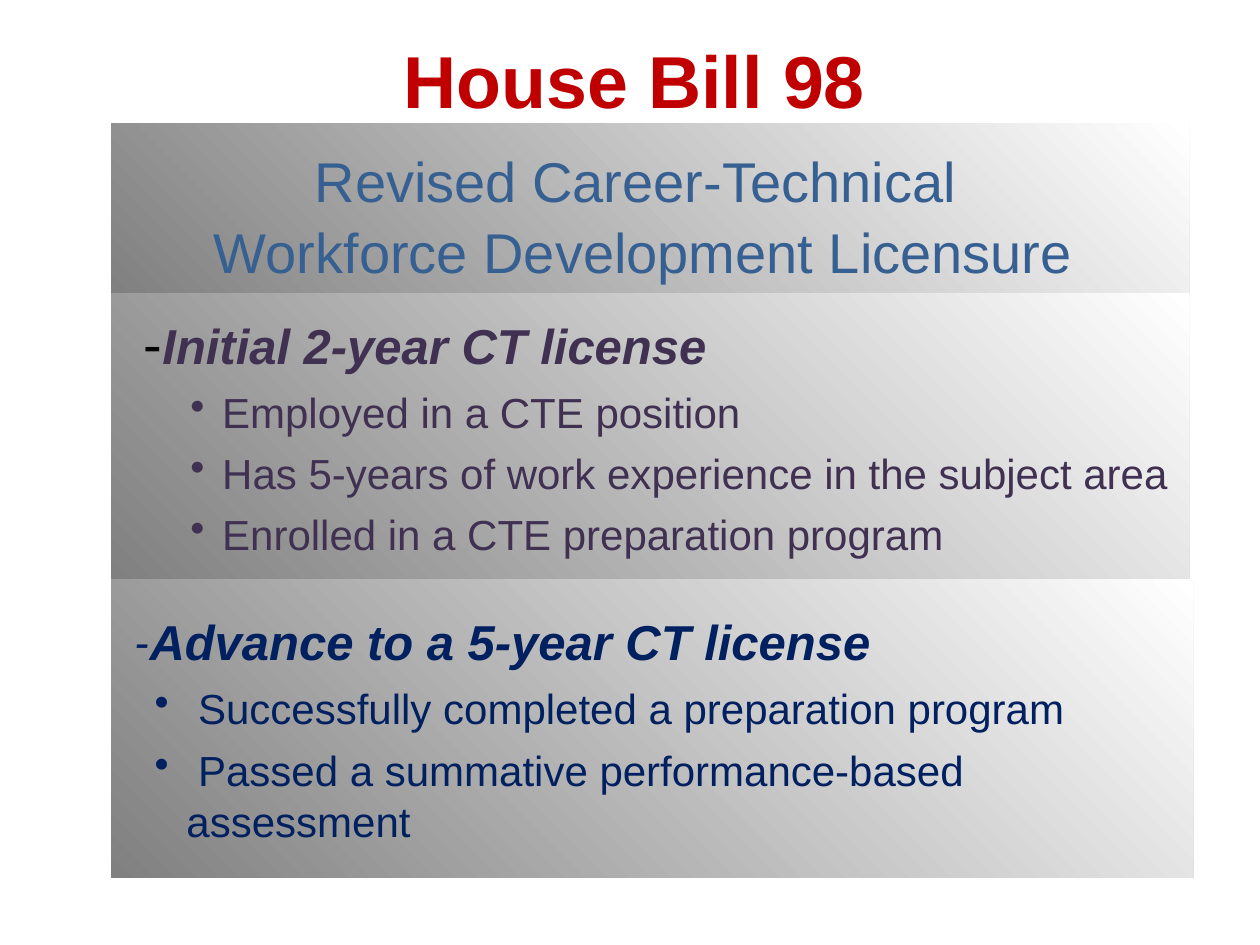
import pptx
import pptx.dml.color
import pptx.enum.shapes
import pptx.enum.text
import pptx.oxml
import pptx.oxml.ns
import pptx.util

Cm, Pt = pptx.util.Cm, pptx.util.Pt
ALIGN = pptx.enum.text.PP_ALIGN
ANCHOR = pptx.enum.text.MSO_ANCHOR

COLORS = {"red": "C00000", "blue": "376092", "purple": "403152",
          "navy": "002060", "black": "000000", "dark": "808080", "light": "FFFFFF"}

TITLE = {"name": "Arial", "size": Pt(42), "bold": True, "italic": False}
SUBTITLE = {"name": "Arial", "size": Pt(32), "bold": False, "italic": False}
HEADING = {"name": "Arial", "size": Pt(28), "bold": True, "italic": True}
ITEM = {"name": "Arial", "size": Pt(24), "bold": False, "italic": False}
INITIAL_DASH = {"name": "Arial", "size": Pt(32), "bold": False, "italic": False}
ADVANCE_DASH = {"name": "Calibri", "size": Pt(28), "bold": False, "italic": True}

PANEL_LEFT = 2.24


def rgb(color):
    return pptx.dml.color.RGBColor.from_string(COLORS[color])


def place(shape, left, top, width, height):
    box = {"left": left, "top": top, "width": width, "height": height}
    for name, value in box.items():
        setattr(shape, name, Cm(value))


def prepare_frame(frame, anchor, inset=None):
    frame.word_wrap = True
    frame.auto_size = pptx.enum.text.MSO_AUTO_SIZE.NONE
    frame.vertical_anchor = anchor
    if inset is not None:
        for side in ("left", "top", "right", "bottom"):
            setattr(frame, f"margin_{side}", Cm(inset))


def add_run(paragraph, text, style, color):
    run = paragraph.add_run()
    run.text = text
    for name, value in style.items():
        setattr(run.font, name, value)
    run.font.color.rgb = rgb(color)


def add_paragraph(frame, runs, align=ALIGN.LEFT, before=0, margin=0, bullet=False):
    """Fill the empty first paragraph, or append one; runs are (text, style, color)."""
    first = frame.paragraphs[0]
    paragraph = frame.add_paragraph() if first.runs else first
    paragraph.alignment = align
    paragraph.space_before = Pt(before)
    paragraph.level = 1 if bullet else 0
    properties = paragraph._p.get_or_add_pPr()
    properties.set("marL", str(Cm(margin)))
    properties.set("indent", str(Cm(-0.64 if bullet else 0)))
    tag = "a:buChar" if bullet else "a:buNone"
    marker = pptx.oxml.parse_xml(f"<{tag} {pptx.oxml.ns.nsdecls('a')}/>")
    if bullet:
        marker.set("char", "•")
    properties.append(marker)
    for text, style, color in runs:
        add_run(paragraph, text, style, color)


def add_license(frame, dash, heading, items, color, before, margin):
    """Write a dashed heading followed by its bulleted requirements."""
    add_paragraph(frame, [dash, (heading, HEADING, color)])
    for item in items:
        add_paragraph(frame, [(item, ITEM, color)],
                      before=before, margin=margin, bullet=True)


def add_panel(slide, top, width, height):
    panel = slide.shapes.add_shape(
        pptx.enum.shapes.MSO_SHAPE.RECTANGLE,
        Cm(PANEL_LEFT), Cm(top), Cm(width), Cm(height))
    panel.shadow.inherit = False
    panel.line.fill.background()
    panel.fill.gradient()
    panel.fill.gradient_angle = 45
    for stop, position, color in zip(panel.fill.gradient_stops, (0, 1), ("dark", "light")):
        stop.position = position
        stop.color.rgb = rgb(color)
    return panel


def write_title(title):
    place(title, 1.55, 0.69, 22.48, 1.8)
    prepare_frame(title.text_frame, ANCHOR.MIDDLE, inset=0)
    add_paragraph(title.text_frame, [("House Bill 98", TITLE, "red")], ALIGN.CENTER)


def write_subtitle(body):
    place(body, PANEL_LEFT, 2.95, 21.46, 3.2)
    prepare_frame(body.text_frame, ANCHOR.TOP, inset=0)
    lines = ("Revised Career-Technical ", "Workforce Development Licensure")
    for line, before in zip(lines, (0, 2)):
        add_paragraph(body.text_frame, [(line, SUBTITLE, "blue")], ALIGN.CENTER, before)


def write_initial_license(slide):
    initial = slide.shapes.add_textbox(Cm(2.9), Cm(6.22), Cm(21.23), Cm(5.46))
    prepare_frame(initial.text_frame, ANCHOR.TOP, inset=0)
    add_license(initial.text_frame, ("-", INITIAL_DASH, "black"),
                "Initial 2-year CT license",
                ["Employed in a CTE position",
                 "Has 5-years of work experience in the subject area",
                 "Enrolled in a CTE preparation program"],
                "purple", before=6, margin=1.58)


def write_advanced_license(panel):
    prepare_frame(panel.text_frame, ANCHOR.MIDDLE)
    add_license(panel.text_frame, (" -", ADVANCE_DASH, "navy"),
                "Advance to a 5-year CT license",
                [" Successfully completed a preparation program",
                 " Passed a summative performance-based assessment"],
                "navy", before=6.7, margin=1.27)


def main():
    deck = pptx.Presentation()
    deck.slide_width, deck.slide_height = Cm(25.4), Cm(19.05)
    slide = deck.slides.add_slide(deck.slide_layouts[1])
    title, body = slide.placeholders

    add_panel(slide, 2.49, 21.74, 3.45)
    add_panel(slide, 5.92, 21.74, 5.77)
    advanced = add_panel(slide, 11.68, 21.82, 6.02)
    for placeholder in (title, body):
        slide.shapes._spTree.append(placeholder._element)  # in front of the panels

    write_title(title)
    write_subtitle(body)
    write_initial_license(slide)
    write_advanced_license(advanced)
    deck.save("out.pptx")


if __name__ == "__main__":
    main()
